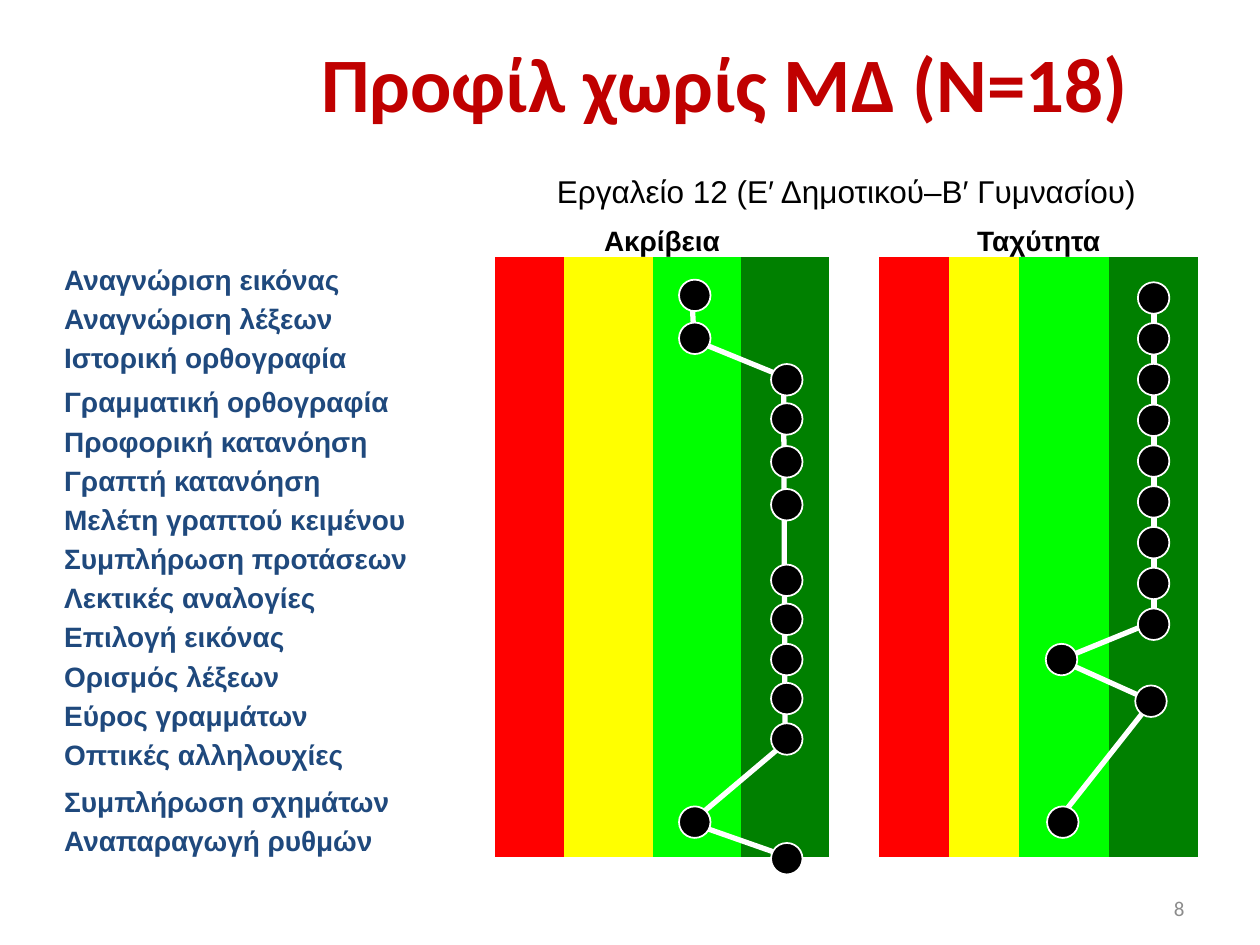
from lxml import etree
from pptx import Presentation
from pptx.dml.color import RGBColor
from pptx.enum.shapes import MSO_CONNECTOR, MSO_SHAPE
from pptx.enum.text import MSO_ANCHOR, PP_ALIGN
from pptx.oxml.ns import qn
from pptx.util import Pt

STRAIGHT = MSO_CONNECTOR.STRAIGHT
OVAL = MSO_SHAPE.OVAL
MIDDLE, BOTTOM = MSO_ANCHOR.MIDDLE, MSO_ANCHOR.BOTTOM
LEFT, CENTER, RIGHT = PP_ALIGN.LEFT, PP_ALIGN.CENTER, PP_ALIGN.RIGHT
PLAIN_TABLE = "{2D5ABB26-0587-4C30-8999-92F81FD0307C}"

SKILLS = [
    "Αναγνώριση εικόνας", "Αναγνώριση λέξεων", "Ιστορική ορθογραφία",
    "Γραμματική ορθογραφία", "Προφορική κατανόηση", "Γραπτή κατανόηση",
    "Μελέτη γραπτού κειμένου", "Συμπλήρωση προτάσεων", "Λεκτικές αναλογίες",
    "Επιλογή εικόνας", "Ορισμός λέξεων", "Εύρος γραμμάτων",
    "Οπτικές αλληλουχίες", "Συμπλήρωση σχημάτων", "Αναπαραγωγή ρυθμών",
]
BANDS = ["FF0000", "FFFF00", "00FF00", "008000"]
BAND_STARTS = [1, 6]
COLUMN_WIDTHS = [246.2, 39.6, 50.4, 50.4, 50.4, 28.8, 39.6, 40.3, 51.1, 51.1]
ROW_HEIGHT = 22.4
ROW_HEIGHTS = [19.4] + [ROW_HEIGHT] * 16
ROW_HEIGHTS[5] = 25.2
ROW_HEIGHTS[15] = 26.6

DOT_SIZE = 18
ACCURACY_HIGH_TOPS = [208, 230.4, 254.9, 279.4, 322.6, 344.9, 367.9, 390.2, 413.3, 481.7]
ACCURACY_DOTS = [(388, top) for top in (159.8, 184.3, 460.8)]
ACCURACY_DOTS += [(440.6, top) for top in ACCURACY_HIGH_TOPS]
SPEED_DOTS = [(650.2, 161.3 + 23.3 * index) for index in range(9)]
SPEED_DOTS += [(597.6, 367.9), (648.7, 391.7), (598.3, 460.8)]
PROFILE_LINES = [
    (395.3, 169.2, 396.7, 194.4), (396.7, 194.4, 447.8, 215.3),
    (447.8, 215.3, 448.6, 422.6), (396.7, 470.9, 450, 489.6),
    (450, 423.4, 394.6, 470.2), (658.1, 355.7, 603.4, 378),
    (657.4, 401.8, 603.4, 470.2), (659.5, 169.2, 659.5, 355),
    (607.7, 378, 658.8, 401),
]


def color(value):
    return RGBColor.from_string(value)


class ProfileSlide:
    heading_font = "Calibri"
    body_font = "Arial"
    label_color = "1F497D"
    ink = "000000"
    paper = "FFFFFF"

    def __init__(self, presentation):
        self.slide = presentation.slides.add_slide(presentation.slide_layouts[6])

    def set_text(self, text_frame, text, size, font_name, text_color, bold, alignment):
        text_frame.text = text
        paragraph = text_frame.paragraphs[0]
        paragraph.alignment = alignment
        font = paragraph.runs[0].font
        font.size = Pt(size)
        font.name = font_name
        font.bold = bold
        font.color.rgb = color(text_color)

    def text(self, box, text, size, text_color, bold, alignment):
        shape = self.slide.shapes.add_textbox(*map(Pt, box))
        shape.text_frame.word_wrap = True
        shape.text_frame.vertical_anchor = MIDDLE
        self.set_text(shape.text_frame, text, size, self.heading_font, text_color, bold, alignment)

    def table(self, left, top):
        shape = self.slide.shapes.add_table(
            len(ROW_HEIGHTS), len(COLUMN_WIDTHS), Pt(left), Pt(top),
            Pt(sum(COLUMN_WIDTHS)), Pt(sum(ROW_HEIGHTS)))
        shape.element.xpath(".//a:tableStyleId")[0].text = PLAIN_TABLE
        table = shape.table
        table.first_row = False
        table.horz_banding = False
        for column, width in zip(table.columns, COLUMN_WIDTHS):
            column.width = Pt(width)
        for row, height in zip(table.rows, ROW_HEIGHTS):
            row.height = Pt(height)
        for cell in table.iter_cells():
            cell.margin_left = cell.margin_right = 0
            cell.margin_top = cell.margin_bottom = 0
            cell.vertical_anchor = BOTTOM
            cell.fill.background()
        return table

    def header(self, table, row, first, last, text, size, bold, margin):
        cell = table.cell(row, first)
        cell.merge(table.cell(row, last))
        cell.margin_top = cell.margin_bottom = Pt(margin)
        self.set_text(cell.text_frame, text, size, self.body_font, self.ink, bold, CENTER)

    def skill_row(self, table, row, label):
        self.set_text(table.cell(row, 0).text_frame, label, 16,
                      self.body_font, self.label_color, True, LEFT)
        for start in BAND_STARTS:
            for offset, band in enumerate(BANDS):
                fill = table.cell(row, start + offset).fill
                fill.solid()
                fill.fore_color.rgb = color(band)

    def line(self, points):
        connector = self.slide.shapes.add_connector(STRAIGHT, *map(Pt, points))
        connector.line.color.rgb = color(self.paper)
        connector.line.width = Pt(3)
        etree.SubElement(connector.element.spPr, qn("a:effectLst"))

    def dot(self, left, top):
        shape = self.slide.shapes.add_shape(OVAL, Pt(left), Pt(top), Pt(DOT_SIZE), Pt(DOT_SIZE))
        shape.shadow.inherit = False
        shape.fill.solid()
        shape.fill.fore_color.rgb = color(self.ink)
        shape.line.color.rgb = color(self.paper)
        shape.line.width = Pt(1)


def main():
    presentation = Presentation()
    presentation.slide_width = Pt(720)
    presentation.slide_height = Pt(540)
    profile = ProfileSlide(presentation)

    profile.text((139, 1.4, 550.8, 90), "Προφίλ χωρίς ΜΔ (Ν=18)", 44, "C00000", True, CENTER)
    table = profile.table(36.7, 94.3)
    profile.header(table, 0, 1, 9, "Εργαλείο 12 (Ε′ Δημοτικού–Β′ Γυμνασίου)", 18, False, 4.3)
    for start, title in zip(BAND_STARTS, ["Ακρίβεια", "Ταχύτητα"]):
        profile.header(table, 1, start, start + 3, title, 16, True, 0)
    for row, label in enumerate(SKILLS, start=2):
        profile.skill_row(table, row, label)
    profile.text((516.2, 508.3, 167.8, 20.9), "8", 12, "8C8C8C", False, RIGHT)

    for points in PROFILE_LINES:
        profile.line(points)
    for left, top in ACCURACY_DOTS + SPEED_DOTS:
        profile.dot(left, top)
    presentation.save("out.pptx")


if __name__ == "__main__":
    main()
